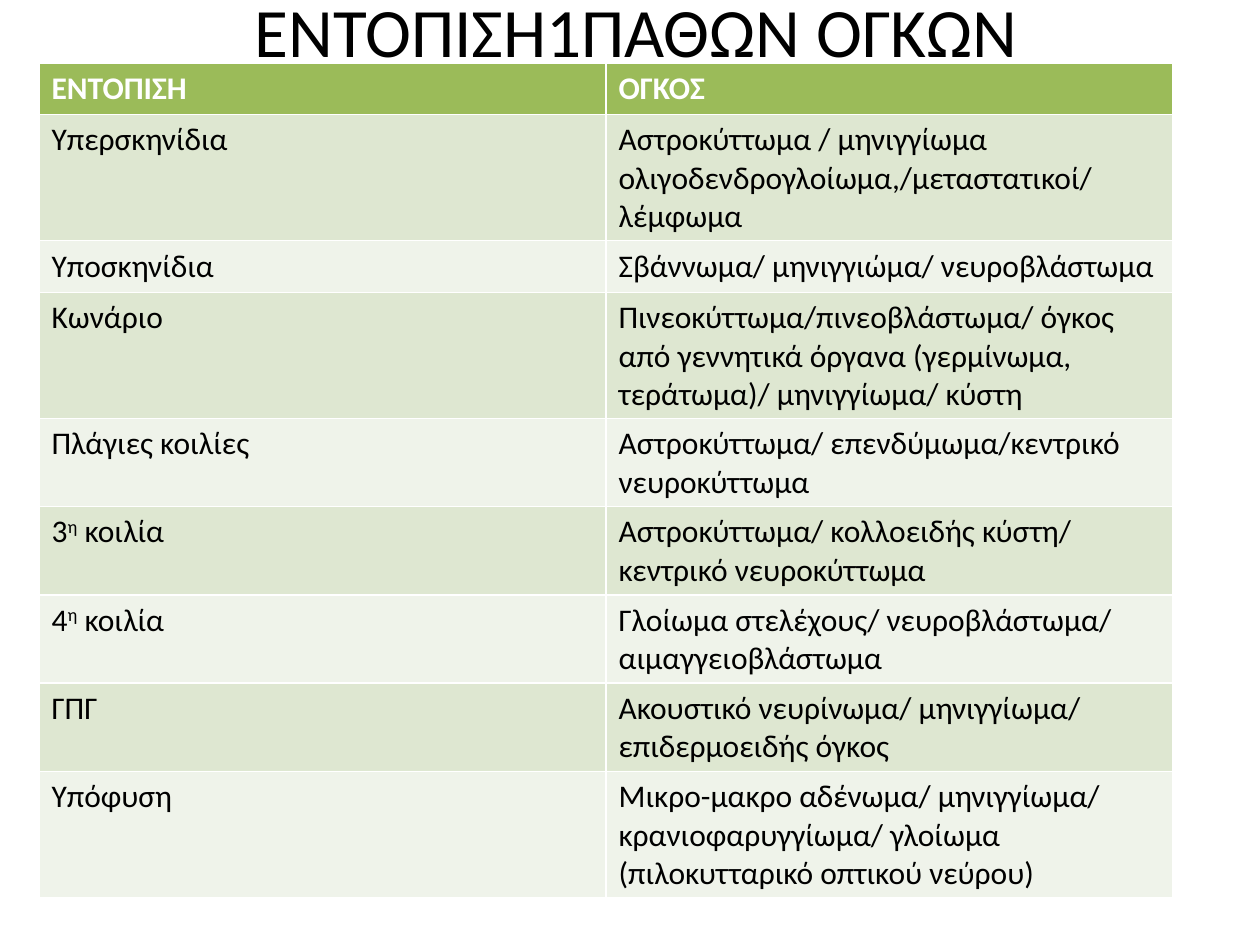
from pptx import Presentation
from pptx.dml.color import RGBColor as RGB
from pptx.enum.text import MSO_ANCHOR as Anchor, PP_ALIGN as Align
from pptx.util import Inches, Pt


def style(run, size, color, bold=False):
    run.font.name = "Calibri"
    run.font.size = Pt(size)
    run.font.bold = bold
    run.font.color.rgb = RGB.from_string(color)


rows = [
    ("ΕΝΤΟΠΙΣΗ", "ΟΓΚΟΣ"),
    ("Υπερσκηνίδια", "Αστροκύττωμα / μηνιγγίωμα ολιγοδενδρογλοίωμα,/μεταστατικοί/ λέμφωμα"),
    ("Υποσκηνίδια", "Σβάννωμα/ μηνιγγιώμα/ νευροβλάστωμα"),
    ("Κωνάριο", "Πινεοκύττωμα/πινεοβλάστωμα/ όγκος από γεννητικά όργανα (γερμίνωμα, τεράτωμα)/ μηνιγγίωμα/ κύστη"),
    ("Πλάγιες κοιλίες", "Αστροκύττωμα/ επενδύμωμα/κεντρικό νευροκύττωμα"),
    ("3^η^ κοιλία", "Αστροκύττωμα/ κολλοειδής κύστη/ κεντρικό νευροκύττωμα"),
    ("4^η^ κοιλία", "Γλοίωμα στελέχους/ νευροβλάστωμα/ αιμαγγειοβλάστωμα"),
    ("ΓΠΓ", "Ακουστικό νευρίνωμα/ μηνιγγίωμα/ επιδερμοειδής όγκος"),
    ("Υπόφυση", "Μικρο-μακρο αδένωμα/ μηνιγγίωμα/ κρανιοφαρυγγίωμα/ γλοίωμα (πιλοκυτταρικό οπτικού νεύρου)"),
]

deck = Presentation()
deck.slide_width, deck.slide_height = Inches(10), Inches(7.5)
slide = deck.slides.add_slide(deck.slide_layouts[6])

title = slide.shapes.add_textbox(Inches(0.55), Inches(0), Inches(9), Inches(0.48))
frame = title.text_frame
frame.word_wrap = True
frame.vertical_anchor = Anchor.MIDDLE
frame.text = "ΕΝΤΟΠΙΣΗ1ΠΑΘΩΝ ΟΓΚΩΝ"
head = frame.paragraphs[0]
head.alignment = Align.CENTER
style(head.runs[0], 39.6, "000000")

high = 0.41
table = slide.shapes.add_table(
    len(rows), 2, Inches(0.31), Inches(0.5), Inches(9), Inches(high * len(rows))
).table

for r, row in enumerate(rows):
    table.rows[r].height = Inches(high)
    top = r == 0
    fill = "9BBB59" if top else ("EFF3EA", "DEE7D1")[r % 2]
    for c, text in enumerate(row):
        cell = table.cell(r, c)
        cell.fill.solid()
        cell.fill.fore_color.rgb = RGB.from_string(fill)
        para = cell.text_frame.paragraphs[0]
        for n, part in enumerate(text.split("^")):
            run = para.add_run()
            run.text = part
            style(run, 18, "FFFFFF" if top else "000000", top)
            if n == 1:
                run.font._element.set("baseline", "30000")

deck.save("out.pptx")
